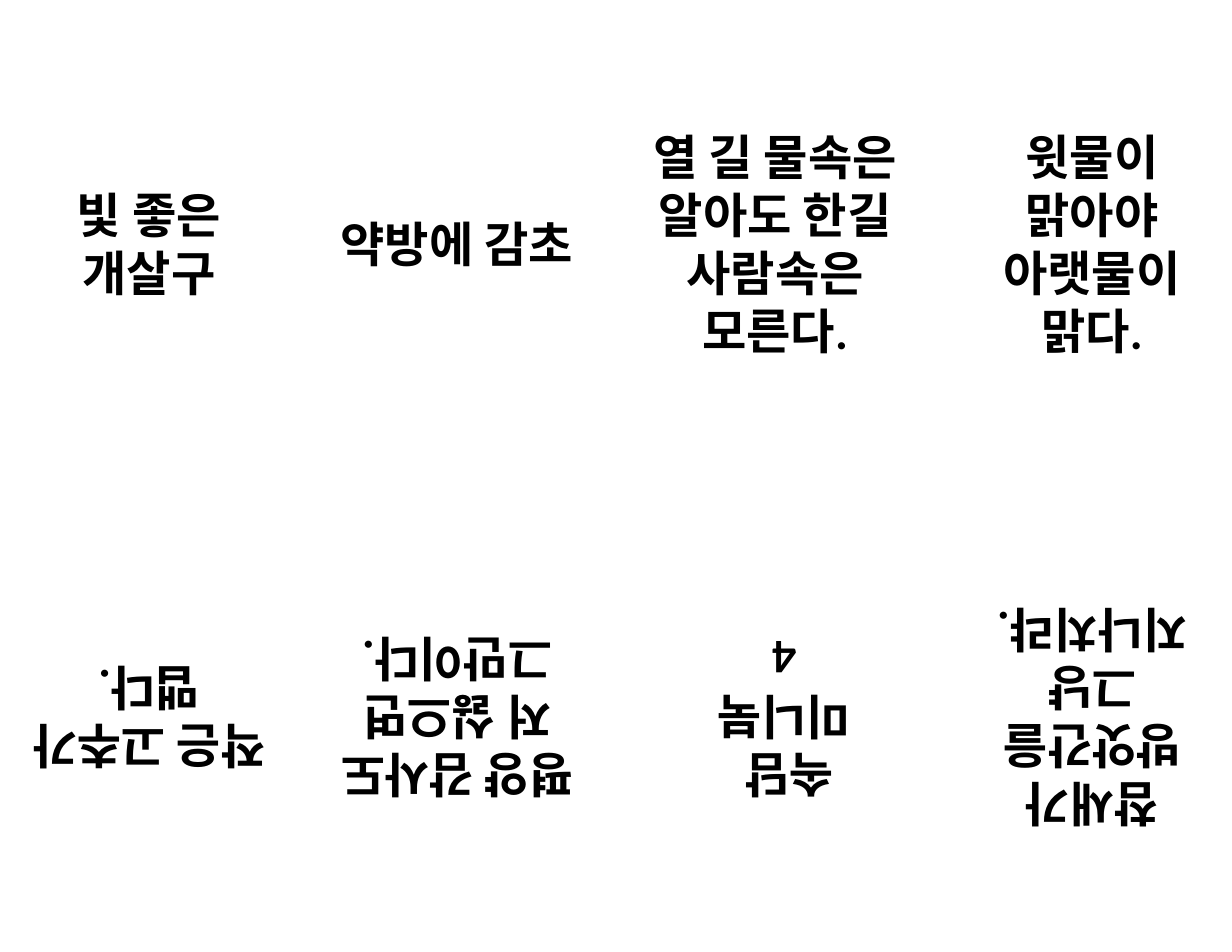
from pptx import Presentation
from pptx.dml.color import RGBColor
from pptx.enum import dml, shapes, text
from pptx.util import Inches, Pt

PANEL_WIDTH, PANEL_HEIGHT = 2.5, 4
TOP_ROW, BOTTOM_ROW = 0.17, 4.42

# Each panel: left edge and its paragraphs
UPRIGHT_PANELS = [
    (0.08, ["빛 좋은 개살구"]),
    (2.83, ["약방에 감초"]),
    (5.67, ["열 길 물속은 알아도 한길 사람속은 모른다."]),
    (8.5, ["윗물이 맑아야 아랫물이 맑다."]),
]
INVERTED_PANELS = [
    (0.08, ["작은 고추가 맵다."]),
    (2.83, ["평양 감사도 저 싫으면 그만이다."]),
    (5.75, ["속담 ", "미니북", "4"]),
    (8.5, ["참새가 방앗간을 그냥 지나치랴."]),
]


def color(hex_value):
    return RGBColor.from_string(hex_value)


def write_paragraphs(tf, lines):
    tf.word_wrap = True
    tf.vertical_anchor = text.MSO_ANCHOR.MIDDLE
    tf.margin_left = tf.margin_right = Inches(0.11)
    tf.margin_top = tf.margin_bottom = Inches(0.06)
    for i, line in enumerate(lines):
        p = tf.add_paragraph() if i else tf.paragraphs[0]
        p.text = line
        p.alignment = text.PP_ALIGN.CENTER
        p.font.name = "Calibri"
        p.font.size = Pt(31)
        p.font.bold = True
        p.font.color.rgb = color("000000")


def add_panel(s, left, top, lines, rotation):
    """Add one page of the fold-up mini book."""
    sp = s.shapes.add_shape(
        shapes.MSO_SHAPE.RECTANGLE, Inches(left), Inches(top),
        Inches(PANEL_WIDTH), Inches(PANEL_HEIGHT))
    sp.rotation = rotation
    sp.shadow.inherit = False
    sp.fill.solid()
    sp.fill.fore_color.rgb = color("FFFFFF")
    sp.line.color.rgb = color("FFFFFF")
    sp.line.width = Pt(0.25)
    sp.line.dash_style = dml.MSO_LINE.DASH
    write_paragraphs(sp.text_frame, lines)


def main():
    prs = Presentation()
    prs.slide_width, prs.slide_height = Inches(11), Inches(8.5)
    s = prs.slides.add_slide(prs.slide_layouts[6])
    for panels, top, rotation in ((UPRIGHT_PANELS, TOP_ROW, 0),
                                  (INVERTED_PANELS, BOTTOM_ROW, 180)):
        for left, lines in panels:
            add_panel(s, left, top, lines, rotation)
    prs.save("out.pptx")


if __name__ == "__main__":
    main()
